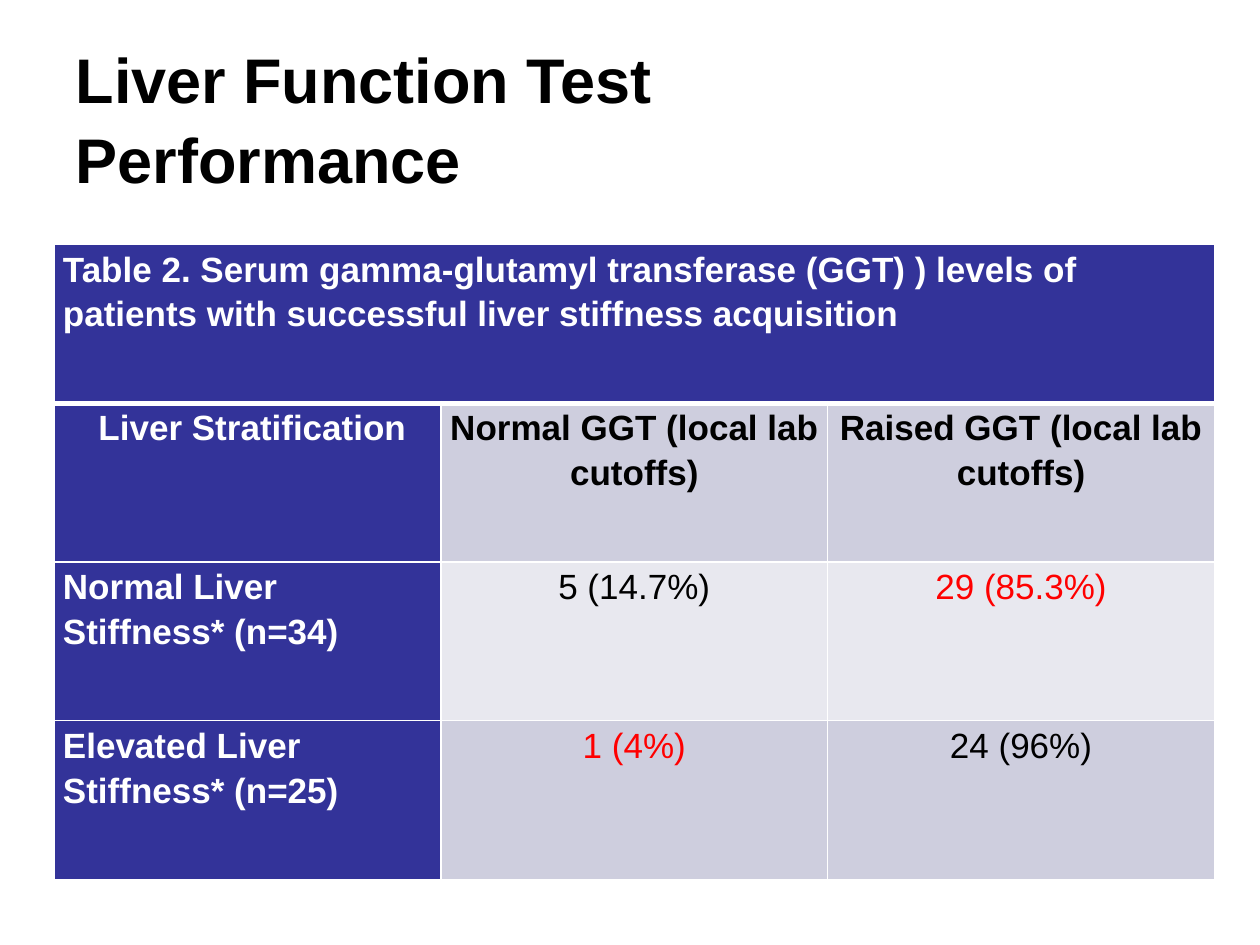
import pptx
import pptx.chart
import pptx.dml.color
import pptx.enum.text
import pptx.oxml
import pptx.oxml.ns
import pptx.util
from pptx.util import Inches, Pt

TITLE = "Liver Function Test\vPerformance"
CAPTION = ("Table 2. Serum gamma-glutamyl transferase (GGT) ) levels of "
           "patients with successful liver stiffness acquisition")
ROWS = [
    (CAPTION, "", ""),
    (" Liver Stratification", "Normal GGT (local lab cutoffs)", "Raised GGT (local lab cutoffs)"),
    ("Normal Liver Stiffness* (n=34)", "5 (14.7%)", "29 (85.3%)"),
    ("Elevated Liver Stiffness* (n=25)", "1 (4%)", "24 (96%)"),
]
HIGHLIGHTED = {"29 (85.3%)", "1 (4%)"}
NAVY, LILAC, PALE = "333399", "CECEDE", "E8E8EF"
WHITE, BLACK, RED = "FFFFFF", "000000", "FF0000"
COLUMN_WIDTH, ROW_HEIGHT = 3.07, 1.26
CAPTION_RULE, THIN_RULE = 3, 1


def color(value):
    """Return the colour of a hex string."""
    return pptx.dml.color.RGBColor.from_string(value)


def style_paragraph(paragraph, size, ink, bold, align, spacing):
    """Format one paragraph and its runs."""
    paragraph.alignment = align
    paragraph.line_spacing = spacing
    for run in paragraph.runs:
        run.font.name = "Arial"
        run.font.size = Pt(size)
        run.font.bold = bold
        run.font.color.rgb = color(ink)


def add_borders(cell, widths):
    """Give a cell white borders of the given widths by side."""
    properties = cell._tc.get_or_add_tcPr()
    for position, (side, width) in enumerate(widths.items()):
        properties.insert(position, pptx.oxml.parse_xml(
            f'<a:ln{side} {pptx.oxml.ns.nsdecls("a")} w="{Pt(width)}">'
            f'<a:solidFill><a:srgbClr val="{WHITE}"/></a:solidFill></a:ln{side}>'))


def style_cell(cell, text, row, column):
    """Fill a cell and format it by its place in the table."""
    align = pptx.enum.text.PP_ALIGN
    heading = row == 0 or column == 0
    cell.fill.solid()
    cell.fill.fore_color.rgb = color(NAVY if heading else PALE if row == 2 else LILAC)
    cell.margin_left = cell.margin_right = Inches(0.07)
    cell.margin_top = cell.margin_bottom = 0
    cell.text_frame.text = text
    ink = WHITE if heading else RED if text in HIGHLIGHTED else BLACK
    centred = row == 1 or not heading
    style_paragraph(cell.text_frame.paragraphs[0], 20, ink, heading or row == 1,
                    align.CENTER if centred else align.LEFT, 1.15)
    add_borders(cell, {"L": THIN_RULE, "R": THIN_RULE,
                       "T": CAPTION_RULE if row == 1 else THIN_RULE,
                       "B": CAPTION_RULE if row == 0 else THIN_RULE})


def add_title(slide):
    """Place and format the slide title."""
    title = slide.shapes.title
    title.left, title.top = Inches(0.5), Inches(0.3)
    title.width, title.height = Inches(9), Inches(1.25)
    title.text_frame.text = TITLE
    title.text_frame.vertical_anchor = pptx.enum.text.MSO_ANCHOR.MIDDLE
    style_paragraph(title.text_frame.paragraphs[0], 36, BLACK, True,
                    pptx.enum.text.PP_ALIGN.LEFT, 1.05)


def add_results(slide):
    """Build the table of GGT levels by liver stiffness."""
    columns = len(ROWS[0])
    results = slide.shapes.add_table(
        len(ROWS), columns, Inches(0.43), Inches(1.94),
        Inches(COLUMN_WIDTH * columns), Inches(ROW_HEIGHT * len(ROWS))).table
    for row, texts in enumerate(ROWS):
        for column, text in enumerate(texts):
            style_cell(results.cell(row, column), text, row, column)
    results.cell(0, 0).merge(results.cell(0, columns - 1))


def main():
    """Build and save the slide."""
    deck = pptx.Presentation()
    deck.slide_width, deck.slide_height = Inches(10), Inches(7.5)
    slide = deck.slides.add_slide(deck.slide_layouts.get_by_name("Title Only"))
    add_title(slide)
    add_results(slide)
    deck.save("out.pptx")


if __name__ == "__main__":
    main()
